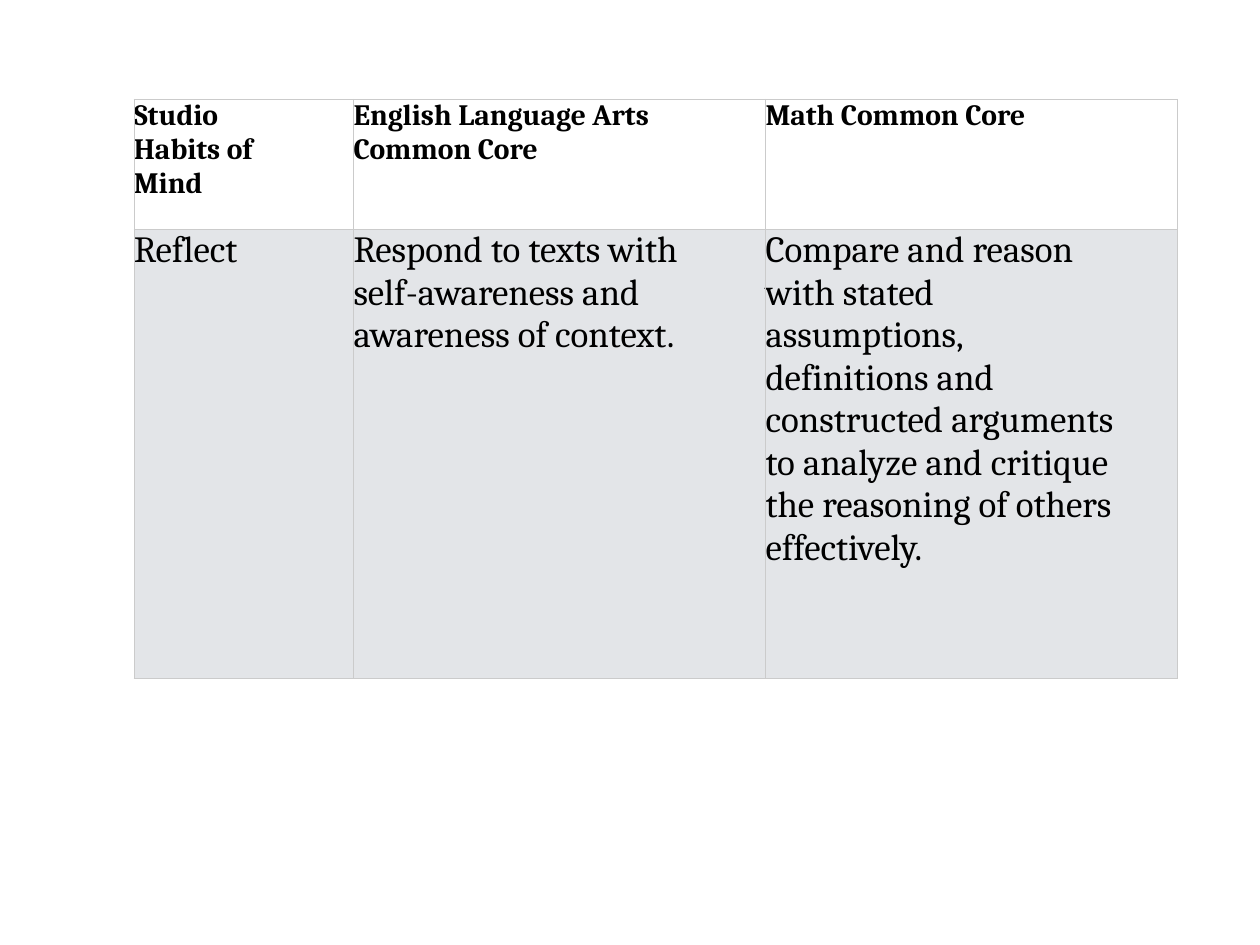
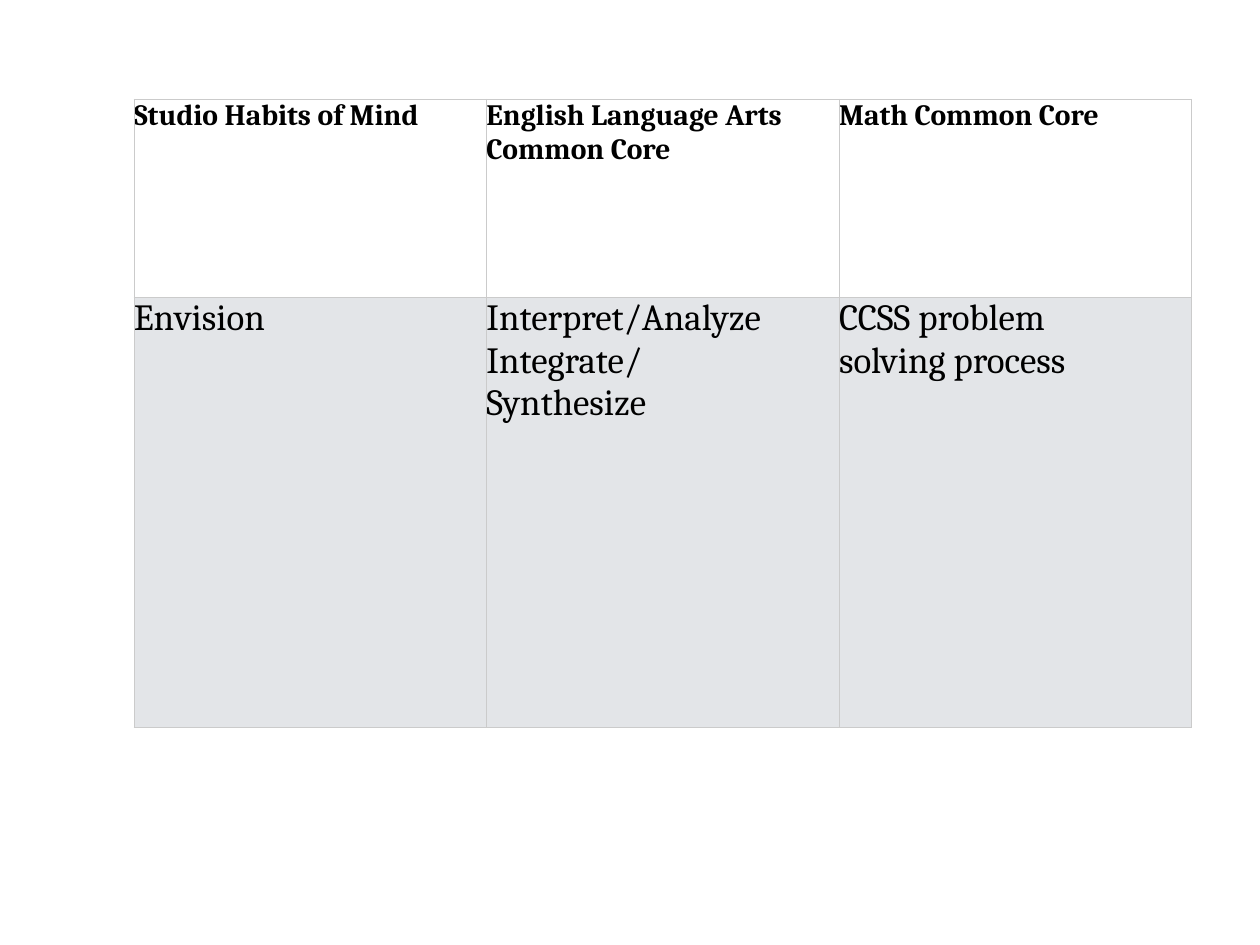
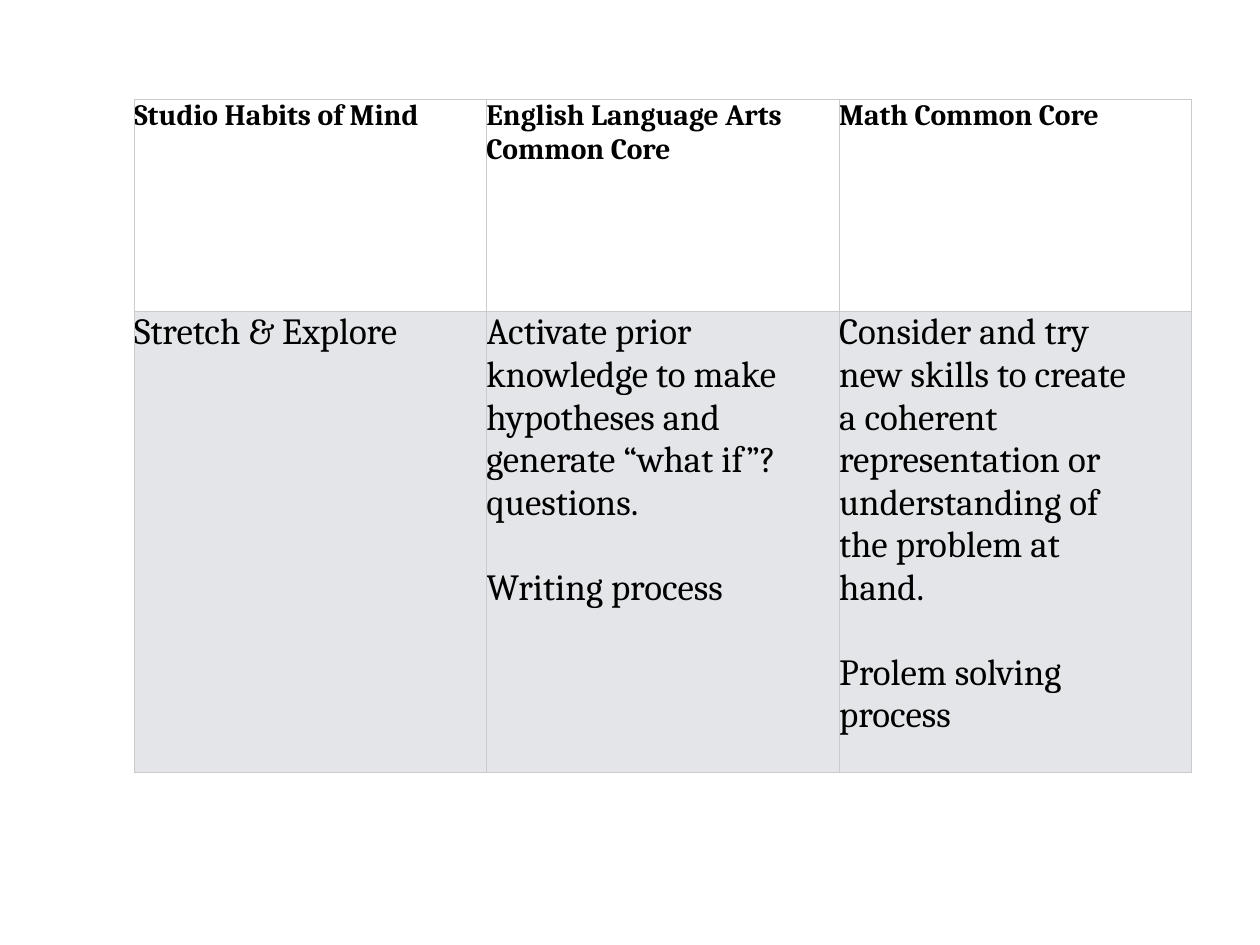
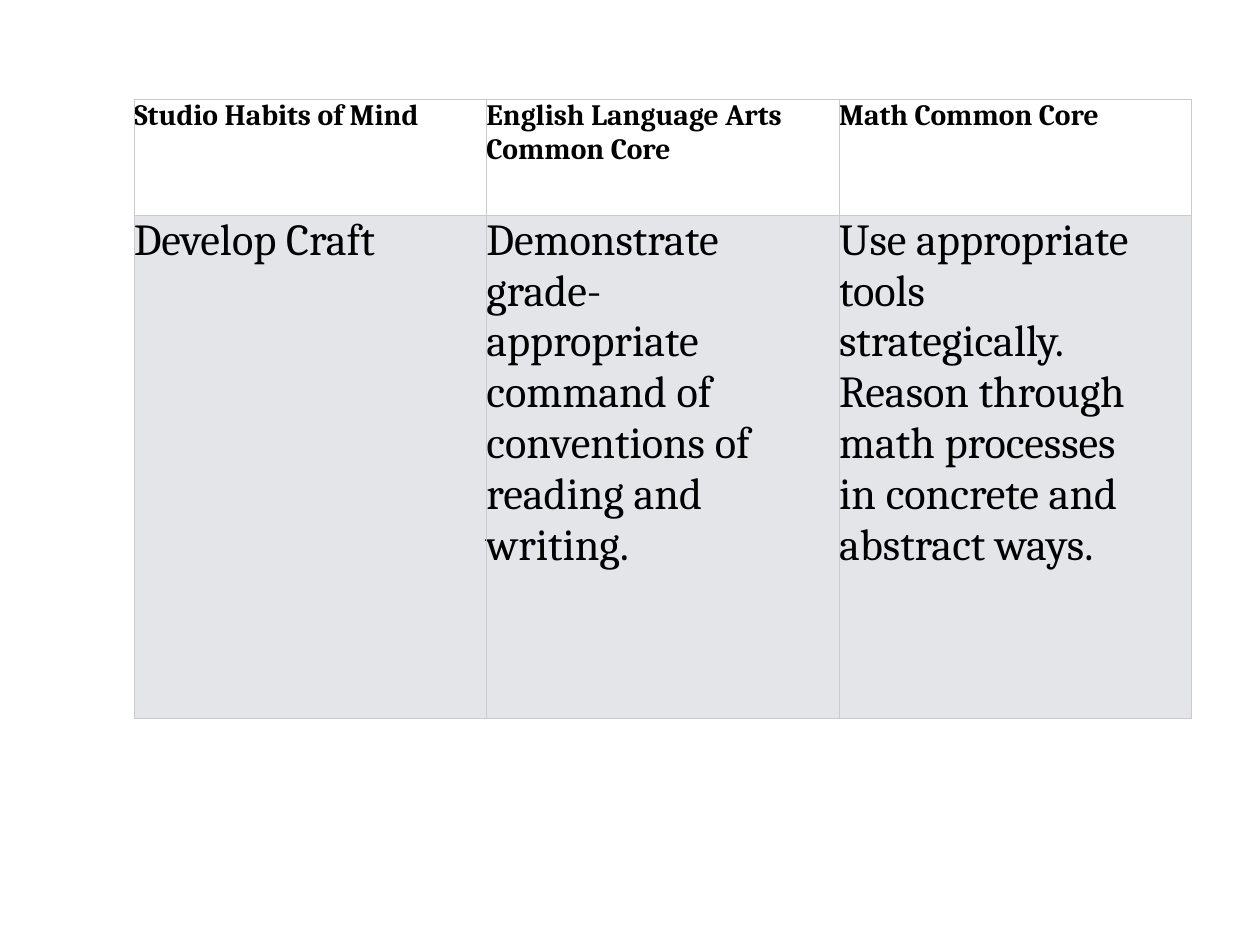
from lxml.etree import SubElement
from pptx import Presentation
from pptx.dml.color import RGBColor
from pptx.oxml.ns import qn
from pptx.util import Inches, Pt

# Shared look
SLIDE_W, SLIDE_H = 14.22, 10.67
LEFT, TOP = 1.51, 1.12
FONT, INK, BORDER = "Cambria", "000000", "CBCBCB"
HEADER_FILL, BODY_FILL = "FFFFFF", "E3E5E8"
HEADER_SIZE = 24
RIGHT_INSET = 0.55
LINE_HEIGHT = 1.15
HEADERS = ["Studio Habits of Mind", "English Language Arts Common Core",
           "Math Common Core"]
EQUAL_COLS = [3.98] * 3

# One entry per slide; each body cell is a list of paragraphs
HABITS = [
    dict(cols=[2.48, 4.65, 4.65], rows=[1.47, 5.07], size=30, gap=0, body=[
        ["Reflect"],
        ["Respond to texts with self-awareness and awareness of context."],
        ["Compare and reason with stated assumptions, definitions and "
         "constructed arguments to analyze and critique the reasoning of "
         "others effectively."]]),
    dict(cols=EQUAL_COLS, rows=[2.24, 4.85], size=30, gap=0, body=[
        ["Envision"],
        ["Interpret/Analyze", "Integrate/Synthesize"],
        ["CCSS problem solving process"]]),
    dict(cols=EQUAL_COLS, rows=[2.4, 5.2], size=30, gap=1, body=[
        ["Stretch & Explore"],
        ["Activate prior knowledge to make hypotheses and generate "
         "“what if”? questions.", "Writing process"],
        ["Consider and try new skills to create a coherent representation or "
         "understanding of the problem at hand.", "Prolem solving process"]]),
    dict(cols=EQUAL_COLS, rows=[1.31, 5.68], size=36, gap=0, body=[
        ["Develop Craft"],
        ["Demonstrate grade-appropriate command of conventions of reading "
         "and writing."],
        ["Use appropriate tools strategically. Reason through math processes "
         "in concrete and abstract ways."]]),
]


def color(hex_string):
    return RGBColor.from_string(hex_string)


def add_borders(cell):
    """Thin line on all four sides; borders come before the fill in tcPr."""
    tc_pr = cell._tc.get_or_add_tcPr()
    for i, side in enumerate(("lnL", "lnR", "lnT", "lnB")):
        ln = SubElement(tc_pr, qn("a:" + side), w=str(Pt(0.5)))
        fill = SubElement(ln, qn("a:solidFill"))
        SubElement(fill, qn("a:srgbClr"), val=BORDER)
        tc_pr.insert(i, ln)


def fill_cell(cell, paragraphs, size, bold, fill, gap=0):
    """Write the paragraphs, with a gap in lines between them."""
    margins = dict(margin_left=0, margin_top=0, margin_bottom=0,
                   margin_right=Inches(RIGHT_INSET))
    for name, value in margins.items():
        setattr(cell, name, value)
    cell.fill.solid()
    cell.fill.fore_color.rgb = color(fill)
    add_borders(cell)

    tf = cell.text_frame
    for i, text in enumerate(paragraphs):
        p = tf.add_paragraph() if i else tf.paragraphs[0]
        if i:
            p.space_before = Pt(gap * size * LINE_HEIGHT)
        r = p.add_run()
        r.text = text
        for name, value in dict(name=FONT, size=Pt(size), bold=bold).items():
            setattr(r.font, name, value)
        r.font.color.rgb = color(INK)


def add_habit_table(s, left, top, cols, rows, size, gap, body):
    """Header row above one row for the habit."""
    box = [Inches(v) for v in (left, top, sum(cols), sum(rows))]
    table = s.shapes.add_table(len(rows), len(cols), *box).table
    table.first_row = table.horz_banding = False
    for row, height in zip(table.rows, rows):
        row.height = Inches(height)
    for i, width in enumerate(cols):
        table.columns[i].width = Inches(width)
        fill_cell(table.cell(0, i), [HEADERS[i]], HEADER_SIZE, True, HEADER_FILL)
        fill_cell(table.cell(1, i), body[i], size, False, BODY_FILL, gap)


def main():
    prs = Presentation()
    prs.slide_width, prs.slide_height = Inches(SLIDE_W), Inches(SLIDE_H)
    blank = prs.slide_layouts[6]
    for habit in HABITS:
        add_habit_table(prs.slides.add_slide(blank), LEFT, TOP, **habit)
    prs.save("out.pptx")


if __name__ == "__main__":
    main()
